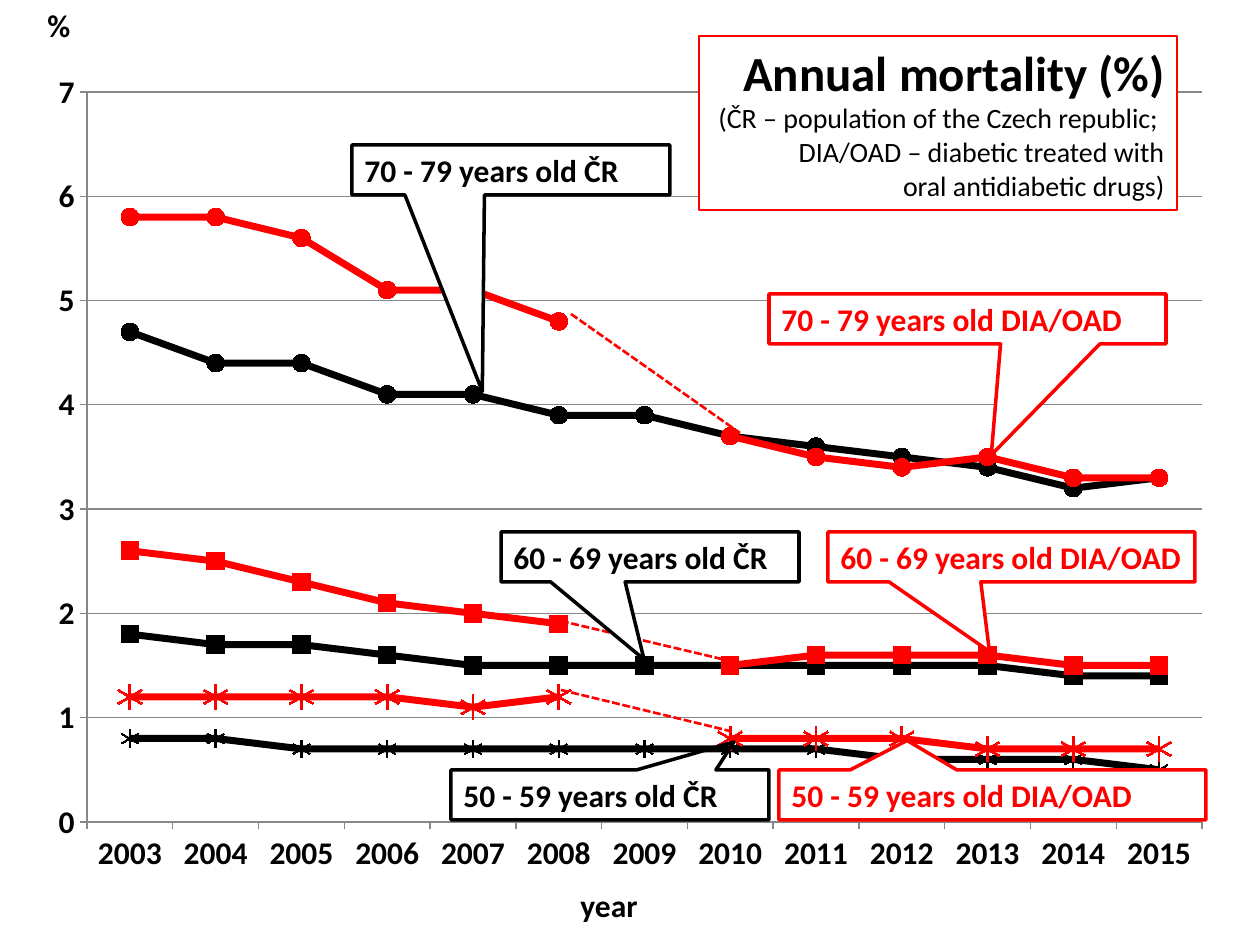
import pptx
import pptx.chart.data
import pptx.dml.color
import pptx.enum.chart
import pptx.enum.dml
import pptx.enum.shapes
import pptx.enum.text
import pptx.oxml
import pptx.oxml.ns
import pptx.util
from dataclasses import dataclass
from lxml import etree

EMU_PER_PX = 914400 / 126
MARKER = pptx.enum.chart.XL_MARKER_STYLE
RIGHT = pptx.enum.text.PP_ALIGN.RIGHT


@dataclass(frozen=True)
class Theme:
    font: str = "Calibri"
    population: str = "000000"
    diabetic: str = "FF0000"
    text: str = "000000"
    paper: str = "FFFFFF"
    axis: str = "878787"
    title_size: int = 28
    label_size: int = 18
    note_size: int = 16


def px(value):
    return pptx.util.Emu(round(value * EMU_PER_PX))


def rgb(color):
    return pptx.dml.color.RGBColor.from_string(color)


class SlideBuilder:
    def __init__(self, slide, theme):
        self.slide = slide
        self.theme = theme

    def style_font(self, font, size, color, bold):
        font.name = self.theme.font
        font.size = pptx.util.Pt(size)
        font.bold = bold
        font.color.rgb = rgb(color)

    def style_line(self, line, color, width):
        line.color.rgb = rgb(color)
        line.width = pptx.util.Pt(width)

    def box(self, preset, bounds, color, width, fill):
        shape = self.slide.shapes.add_shape(preset, *map(px, bounds))
        shape.shadow.inherit = False
        if fill:
            shape.fill.solid()
            shape.fill.fore_color.rgb = rgb(fill)
        else:
            shape.fill.background()
        self.style_line(shape.line, color, width)
        return shape

    def callout(self, text, bounds, tip, color, fill):
        """Add a label whose tip is offset from its centre in shares of its size."""
        shape = self.box(pptx.enum.shapes.MSO_SHAPE.RECTANGULAR_CALLOUT, bounds, color, 2, fill)
        shape.adjustments[0], shape.adjustments[1] = tip
        shape.text_frame.vertical_anchor = pptx.enum.text.MSO_ANCHOR.MIDDLE
        paragraph = shape.text_frame.paragraphs[0]
        paragraph.text = text
        paragraph.alignment = pptx.enum.text.PP_ALIGN.LEFT
        self.style_font(paragraph.font, self.theme.label_size, color, True)

    def title_box(self, bounds, title, notes):
        theme = self.theme
        shape = self.box(pptx.enum.shapes.MSO_SHAPE.RECTANGLE, bounds, theme.diabetic, 0.75, theme.paper)
        frame = shape.text_frame
        frame.word_wrap = False
        frame.auto_size = pptx.enum.text.MSO_AUTO_SIZE.SHAPE_TO_FIT_TEXT
        frame.vertical_anchor = pptx.enum.text.MSO_ANCHOR.TOP
        frame.text = "\n".join([title, *notes])
        for index, paragraph in enumerate(frame.paragraphs):
            paragraph.alignment = RIGHT
            size = theme.note_size if index else theme.title_size
            self.style_font(paragraph.font, size, theme.text, index == 0)

    def axis_label(self, text, bounds):
        frame = self.slide.shapes.add_textbox(*map(px, bounds)).text_frame
        frame.word_wrap = False
        frame.auto_size = pptx.enum.text.MSO_AUTO_SIZE.SHAPE_TO_FIT_TEXT
        paragraph = frame.paragraphs[0]
        paragraph.text = text
        self.style_font(paragraph.font, self.theme.label_size, self.theme.text, True)

    def dashed_line(self, start, end):
        connector = self.slide.shapes.add_connector(
            pptx.enum.shapes.MSO_CONNECTOR.STRAIGHT, *map(px, start + end))
        self.style_line(connector.line, self.theme.diabetic, 1.5)
        connector.line.dash_style = pptx.enum.dml.MSO_LINE.SQUARE_DOT
        properties = connector.element.spPr
        etree.SubElement(properties, pptx.oxml.ns.qn("a:effectLst"))

    def line_chart(self, bounds, plot_bounds, categories, series_rows):
        data = pptx.chart.data.CategoryChartData()
        data.categories = categories
        for number, (_, _, _, values) in enumerate(series_rows, 1):
            data.add_series(f"Series {number}", values)
        chart = self.slide.shapes.add_chart(
            pptx.enum.chart.XL_CHART_TYPE.LINE_MARKERS, *map(px, bounds), data).chart
        chart.has_legend = False
        chart.has_title = False
        self.style_font(chart.font, self.theme.label_size, self.theme.text, True)
        self.place_plot(chart, bounds, plot_bounds)

        value_axis = chart.value_axis
        value_axis.minimum_scale, value_axis.maximum_scale, value_axis.major_unit = 0, 7, 1
        value_axis.has_major_gridlines = True
        self.style_line(value_axis.major_gridlines.format.line, self.theme.axis, 0.75)
        for axis in (value_axis, chart.category_axis):
            axis.major_tick_mark = pptx.enum.chart.XL_TICK_MARK.OUTSIDE
            axis.tick_labels.number_format = "General"
            axis.tick_labels.number_format_is_linked = False
            self.style_line(axis.format.line, self.theme.axis, 0.75)

        plot = chart.plots[0]
        plot.vary_by_categories = False
        for series, (color, symbol, size, _) in zip(plot.series, series_rows):
            series.smooth = False
            self.style_line(series.format.line, color, 4)
            marker = series.marker
            marker.style, marker.size = symbol, size
            self.style_line(marker.format.line, color, 0.75)
            if symbol == MARKER.STAR:
                marker.format.fill.background()
            else:
                marker.format.fill.solid()
                marker.format.fill.fore_color.rgb = rgb(color)

    def place_plot(self, chart, bounds, plot_bounds):
        """Fix the inner plot area at plot_bounds, given in slide px."""
        left, top, width, height = bounds
        x, y, plot_width, plot_height = plot_bounds
        shares = {"x": (x - left) / width, "y": (y - top) / height,
                  "w": plot_width / width, "h": plot_height / height}
        plot_area = chart.element.find(".//" + pptx.oxml.ns.qn("c:plotArea"))
        for old_layout in plot_area.findall(pptx.oxml.ns.qn("c:layout")):
            plot_area.remove(old_layout)
        layout = etree.Element(pptx.oxml.ns.qn("c:layout"))
        manual = etree.SubElement(layout, pptx.oxml.ns.qn("c:manualLayout"))
        settings = {"layoutTarget": "inner", "xMode": "edge", "yMode": "edge", **shares}
        for name, value in settings.items():
            text = value if isinstance(value, str) else f"{value:.4f}"
            etree.SubElement(manual, pptx.oxml.ns.qn("c:" + name)).set("val", text)
        plot_area.insert(0, layout)


def main():
    theme = Theme()
    black, red, paper = theme.population, theme.diabetic, theme.paper
    presentation = pptx.Presentation()
    presentation.slide_width, presentation.slide_height = px(1260), px(945)
    slide = presentation.slides.add_slide(presentation.slide_layouts[6])
    builder = SlideBuilder(slide, theme)

    mortality = [
        (black, MARKER.STAR, 10, [0.8, 0.8, 0.7, 0.7, 0.7, 0.7, 0.7, 0.7, 0.7, 0.6, 0.6, 0.6, 0.5]),
        (red, MARKER.STAR, 14, [1.2, 1.2, 1.2, 1.2, 1.1, 1.2, None, 0.8, 0.8, 0.8, 0.7, 0.7, 0.7]),
        (black, MARKER.SQUARE, 10, [1.8, 1.7, 1.7, 1.6, 1.5, 1.5, 1.5, 1.5, 1.5, 1.5, 1.5, 1.4, 1.4]),
        (red, MARKER.SQUARE, 10, [2.6, 2.5, 2.3, 2.1, 2, 1.9, None, 1.5, 1.6, 1.6, 1.6, 1.5, 1.5]),
        (black, MARKER.CIRCLE, 10, [4.7, 4.4, 4.4, 4.1, 4.1, 3.9, 3.9, 3.7, 3.6, 3.5, 3.4, 3.2, 3.3]),
        (red, MARKER.CIRCLE, 10, [5.8, 5.8, 5.6, 5.1, 5.1, 4.8, None, 3.7, 3.5, 3.4, 3.5, 3.3, 3.3]),
    ]
    years = [str(year) for year in range(2003, 2016)]
    builder.line_chart((35, 55, 1191, 833), (87, 92, 1115, 730), years, mortality)
    builder.axis_label("%", (35, 0, 49, 50))

    for start, end in [((571, 314), (740, 433)), ((561, 621), (730, 661)), ((561, 690), (730, 731))]:
        builder.dashed_line(start, end)

    callouts = [
        ("60 - 69 years old DIA/OAD", 828, 532, 367, (-0.06, 1.89), red, paper),
        ("70 - 79 years old DIA/OAD", 769, 294, 397, (0.06, 2.72), red, paper),
        ("50 - 59 years old DIA/OAD", 779, 770, 427, (-0.2, -1.09), red, paper),
        ("50 - 59 years old ČR", 451, 770, 318, (0.39, -1.06), black, None),
        ("60 - 69 years old ČR", 501, 532, 298, (-0.02, 2.05), black, paper),
        ("70 - 79 years old ČR", 352, 145, 318, (-0.09, 4.43), black, paper),
    ]
    for text, left, top, width, tip, color, fill in callouts:
        builder.callout(text, (left, top, width, 50), tip, color, fill)

    builder.title_box((699, 36, 478, 174), "Annual mortality (%)", [
        "(ČR – population of the Czech republic; ",
        "DIA/OAD – diabetic treated with",
        "oral antidiabetic drugs)",
    ])
    builder.axis_label("year", (568, 880, 83, 50))
    presentation.save("out.pptx")


if __name__ == "__main__":
    main()
